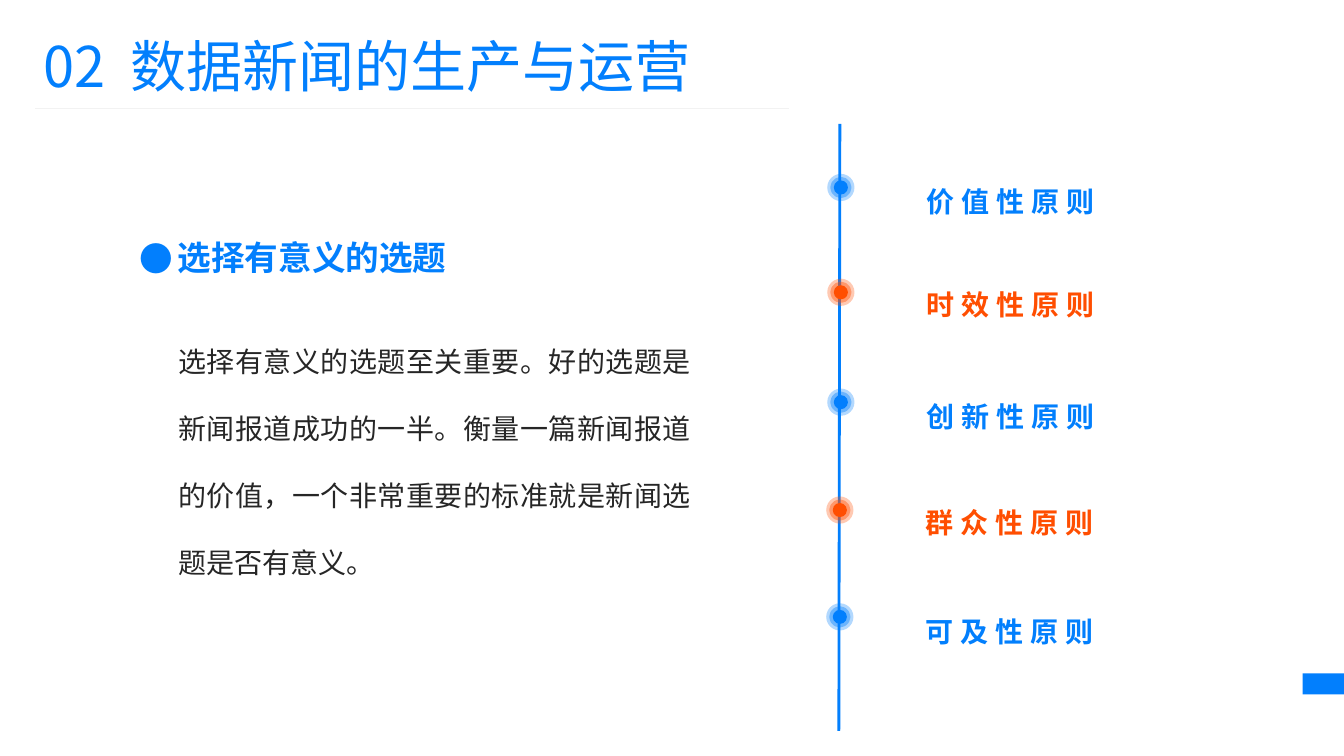
from lxml import etree
from pptx import Presentation
from pptx.dml.color import RGBColor
from pptx.enum import shapes, text
from pptx.oxml import ns
from pptx.util import Inches, Pt

BLUE = RGBColor(0x02, 0x7F, 0xFD)
ORANGE = RGBColor(0xFF, 0x4E, 0x01)
INK = RGBColor(0x26, 0x26, 0x26)
RULE = RGBColor(0xF2, 0xF2, 0xF2)
FONT = "Noto Sans CJK SC"

# Name, centre of the dot (x, y) and top of the label
PRINCIPLES = [
    ("价值性原则", 8.34, 1.86, 0.97),
    ("时效性原则", 8.34, 2.9, 2.0),
    ("创新性原则", 8.34, 3.99, 3.11),
    ("群众性原则", 8.33, 5.06, 4.16),
    ("可及性原则", 8.33, 6.12, 5.24),
]


def add_child(parent, tag, **attributes):
    return etree.SubElement(parent, ns.qn(tag), attributes)


def style_font(para, size, color, bold=False, spacing=0):
    """Set the font of a paragraph, for Latin and East Asian text alike."""
    font = para.font
    font.size, font.bold, font.name = Pt(size), bold, FONT
    font.color.rgb = color
    properties = para._p.pPr.find(ns.qn("a:defRPr"))
    add_child(properties, "a:ea", typeface=FONT)
    if spacing:
        properties.set("spc", str(round(spacing * 100)))


def add_text_box(page, left, top, width, height, margin=0):
    """Add a wrapping text box and return its frame and first paragraph."""
    box = page.shapes.add_textbox(
        Inches(left), Inches(top), Inches(width), Inches(height))
    frame = box.text_frame
    frame.word_wrap = True
    frame.margin_left = frame.margin_right = Inches(margin)
    frame.margin_top = frame.margin_bottom = Inches(margin / 2)
    return frame, frame.paragraphs[0]


def add_line(page, start, end, color, weight):
    line = page.shapes.add_connector(
        shapes.MSO_CONNECTOR.STRAIGHT, *map(Inches, start + end))
    line.line.color.rgb = color
    line.line.width = Pt(weight)
    add_child(line._element.spPr, "a:effectLst")


def add_filled(page, kind, left, top, width, height, color):
    shape = page.shapes.add_shape(
        kind, Inches(left), Inches(top), Inches(width), Inches(height))
    shape.shadow.inherit = False
    shape.fill.solid()
    shape.fill.fore_color.rgb = color
    shape.line.fill.background()
    return shape


def set_opacity(fill_parent, percent):
    color = fill_parent.find(ns.qn("a:solidFill"))[0]
    add_child(color, "a:alpha", val=str(percent * 1000))


def add_heading(page, left, top, width):
    frame, para = add_text_box(page, left, top, width, 0.77, margin=0.1)
    style_font(para, 40, BLUE)
    for words in ("02", " ", "数据新闻的生产与运营"):
        span = para.add_run()
        span.text = words
        if words == " ":
            span.font._element.set("spc", "900")
    add_line(page, (left + 0.02, top + 0.82), (left + 7.5, top + 0.82), RULE, 0.5)


def add_dot(page, x, y, color):
    """Draw a dot with a translucent rim and halo around the centre x, y."""
    for size, has_rim in ((0.27, False), (0.14, True)):
        dot = add_filled(page, shapes.MSO_SHAPE.OVAL,
                         x - size / 2, y - size / 2, size, size, color)
        if has_rim:
            dot.line.color.rgb = color
            dot.line.width = Pt(5)
            set_opacity(dot.line._ln, 40)
        else:
            set_opacity(dot._element.spPr, 30)


def add_timeline(page, top, bottom):
    add_line(page, (8.33, top), (8.32, bottom), BLUE, 2)
    for index, (name, x, y, label_top) in enumerate(PRINCIPLES):
        color = ORANGE if index % 2 else BLUE
        add_dot(page, x, y, color)
        frame, para = add_text_box(page, x + 0.34, label_top, 2.69, 1.2)
        para.text = name
        para.alignment = text.PP_ALIGN.CENTER
        para.line_spacing = Pt(85.7)
        style_font(para, 20, color, bold=True, spacing=4.9)


def add_topic(page, left, top):
    frame, para = add_text_box(page, left, top, 4.57, 0.44)
    frame.vertical_anchor = text.MSO_ANCHOR.BOTTOM
    para.text = "选择有意义的选题"
    para.alignment = text.PP_ALIGN.CENTER
    properties = para._p.get_or_add_pPr()
    properties.set("marL", str(Inches(0.38)))
    properties.set("indent", str(Inches(-0.38)))
    add_child(add_child(properties, "a:buClr"), "a:srgbClr", val=str(BLUE))
    add_child(properties, "a:buFont", typeface=FONT)
    add_child(properties, "a:buChar", char="●")
    style_font(para, 24, BLUE, bold=True)

    frame, para = add_text_box(page, left + 1.15, top + 0.77, 5.08, 2.9)
    para.text = ("选择有意义的选题至关重要。好的选题是新闻报道成功的一半。"
                 "衡量一篇新闻报道的价值，一个非常重要的标准就是新闻选题是否有意义。")
    para.alignment = text.PP_ALIGN.JUSTIFY
    para.line_spacing = 2.0
    style_font(para, 20, INK)


def main():
    deck = Presentation()
    deck.slide_width, deck.slide_height = Inches(13.33), Inches(7.5)
    page = deck.slides.add_slide(deck.slide_layouts[6])
    add_filled(page, shapes.MSO_SHAPE.RECTANGLE, 12.92, 6.68, 0.41, 0.21, BLUE)
    add_heading(page, 0.33, 0.26, 7.68)
    add_timeline(page, 1.23, 7.25)
    add_topic(page, 0.62, 2.31)
    deck.save("out.pptx")


if __name__ == "__main__":
    main()
